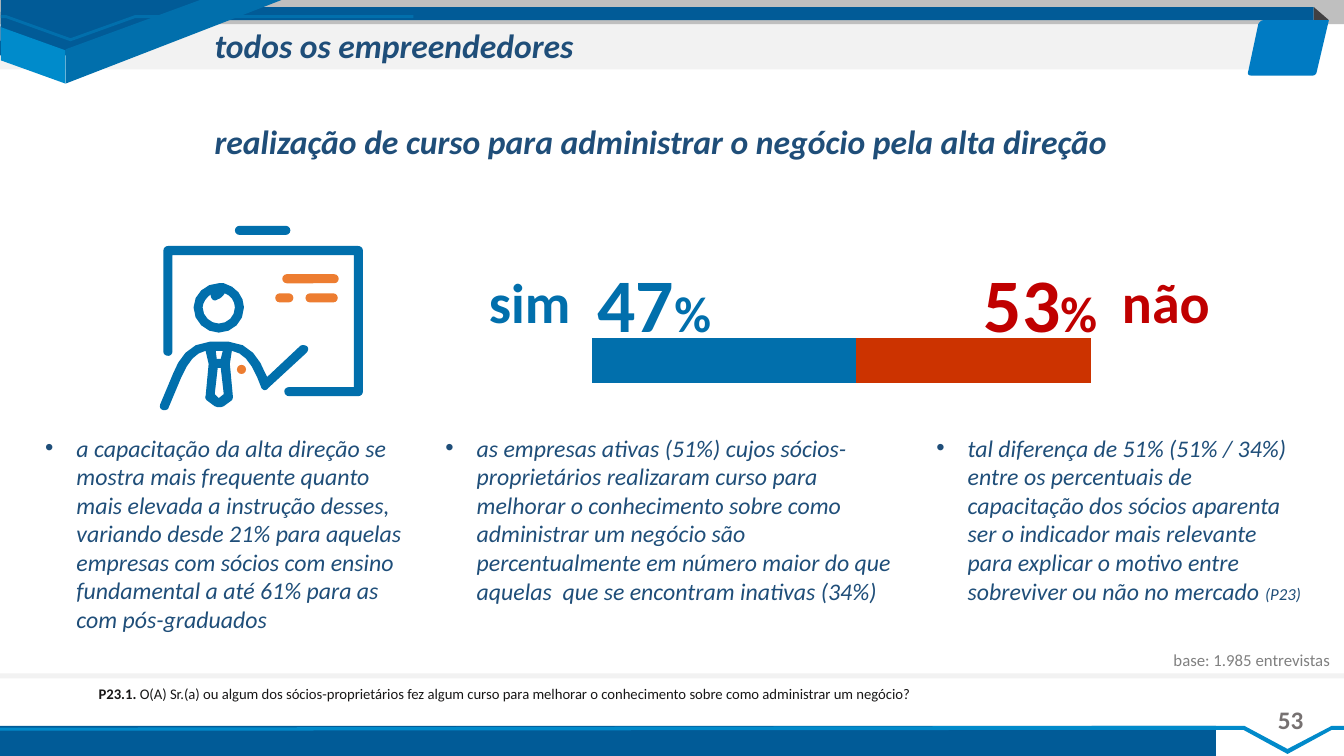
from lxml import etree
from pptx import Presentation
from pptx.chart.data import CategoryChartData
from pptx.dml.color import RGBColor
from pptx.enum.chart import XL_CHART_TYPE
from pptx.enum.shapes import MSO_SHAPE
from pptx.enum.text import MSO_AUTO_SIZE, PP_ALIGN
from pptx.oxml.ns import qn
from pptx.util import Inches, Pt

RECT = MSO_SHAPE.RECTANGLE
PILL = MSO_SHAPE.ROUNDED_RECTANGLE
OVAL = MSO_SHAPE.OVAL
STACKED = XL_CHART_TYPE.BAR_STACKED_100
CENTER = PP_ALIGN.CENTER
GROW = MSO_AUTO_SIZE.SHAPE_TO_FIT_TEXT
FONT = "Calibri"
COLORS = {
    "navy": "1F4E79", "navy_edge": "43739E", "deep": "015B97", "blue": "016FAC",
    "bright": "008BCB", "ribbon": "018ACA", "badge": "007BC3", "fold": "414042",
    "pale": "F2F2F2", "silver": "BFBFBF", "gray": "808080", "number": "767171",
    "ink": "181717", "orange": "ED7D31", "red": "C00000", "brick": "CC3300",
    "black": "000000",
}

HEADER_PIECES = [
    ("blue", [[(2.87, -.03), (2.04, -.02), (.65, .49), (.65, .83)]]),
    ("bright", [[(.65, .5), (.01, .27), (.01, .6), (.65, .83)]]),
]
FOOTER_RIBBON = [[(-.17, 7.22), (12.34, 7.2), (12.77, 7.43), (13.21, 7.2), (13.33, 7.2),
                  (13.33, 7.24), (13.21, 7.24), (12.77, 7.48), (12.33, 7.24), (-.18, 7.25)]]
HEADER_RIBBON = [[(.01, .15), (.06, .15), (.7, .38), (1.34, .15), (4.1, .15),
                  (4.1, .18), (1.34, .18), (.7, .41), (.06, .18), (.01, .18)]]
BADGE = [[(12.53, .2), (13.18, .2), (13.06, .71), (13.06, .73, 13.04, .75, 13.02, .75),
          (12.41, .75), (12.38, .75, 12.37, .73, 12.38, .71), (12.48, .24),
          (12.49, .22, 12.51, .2, 12.53, .2)]]
PRESENTER_BODY = [
    [(3.05, 3.44), (3.03, 3.42, 3, 3.42, 2.98, 3.43), (2.65, 3.74), (2.63, 3.7),
     (2.58, 3.57, 2.48, 3.4, 2.27, 3.39), (2.08, 3.39), (1.87, 3.4, 1.77, 3.57, 1.72, 3.7),
     (1.59, 4.01), (1.58, 4.04, 1.59, 4.06, 1.62, 4.07), (1.65, 4.07, 1.67, 4.06, 1.67, 4.05),
     (1.8, 3.74), (1.87, 3.58, 1.94, 3.5, 2.04, 3.48), (2.07, 3.61), (2.04, 3.93),
     (2.03, 3.94, 2.04, 3.96, 2.05, 3.97), (2.13, 4.03), (2.16, 4.04), (2.19, 4.04),
     (2.22, 4.03), (2.3, 3.97), (2.31, 3.96, 2.31, 3.94, 2.31, 3.93), (2.28, 3.61),
     (2.3, 3.48), (2.41, 3.5, 2.48, 3.58, 2.55, 3.74), (2.59, 3.84),
     (2.59, 3.85, 2.6, 3.86, 2.62, 3.87), (2.63, 3.87, 2.65, 3.87, 2.66, 3.85),
     (3.04, 3.5), (3.06, 3.48, 3.06, 3.45, 3.05, 3.44)],
    [(2.21, 3.48), (2.19, 3.56), (2.15, 3.56), (2.14, 3.48)],
    [(2.17, 3.95), (2.13, 3.91), (2.16, 3.65), (2.19, 3.65), (2.22, 3.91)],
]
BOARD = [[(3.55, 3.93), (2.87, 3.93), (2.84, 3.93, 2.82, 3.91, 2.82, 3.88),
          (2.82, 3.86, 2.84, 3.84, 2.87, 3.84), (3.51, 3.84), (3.51, 2.53), (1.71, 2.53),
          (1.71, 3.49), (1.71, 3.51, 1.69, 3.53, 1.67, 3.53),
          (1.64, 3.53, 1.62, 3.51, 1.62, 3.49), (1.62, 2.49),
          (1.62, 2.46, 1.64, 2.44, 1.67, 2.44), (3.55, 2.44),
          (3.58, 2.44, 3.6, 2.46, 3.6, 2.49), (3.6, 3.88), (3.6, 3.91, 3.58, 3.93, 3.55, 3.93)]]
PRESENTER_HEAD = [
    [(2.22, 2.81), (2.21, 2.81, 2.19, 2.81, 2.17, 2.81), (2.04, 2.81, 1.92, 2.92, 1.92, 3.05),
     (1.92, 3.19, 2.04, 3.3, 2.17, 3.3), (2.31, 3.3, 2.42, 3.19, 2.42, 3.05),
     (2.42, 2.94, 2.34, 2.84, 2.22, 2.81)],
    [(2.17, 3.21), (2.09, 3.21, 2.01, 3.14, 2.01, 3.05), (2.01, 3, 2.05, 2.95, 2.09, 2.92),
     (2.09, 2.93, 2.09, 2.95, 2.1, 2.96), (2.11, 2.98, 2.13, 2.99, 2.16, 2.97),
     (2.19, 2.96, 2.21, 2.94, 2.23, 2.91), (2.29, 2.93, 2.33, 2.99, 2.33, 3.05),
     (2.33, 3.14, 2.26, 3.21, 2.17, 3.21)],
]
BOARD_STROKES = [(3.03, 2.91, .32, "orange"), (2.73, 2.91, .18, "orange"),
                 (2.8, 2.72, .56, "orange"), (2.33, 2.24, .55, "blue")]
FINDINGS = [
    (.35, 3.78, 2.1, ["a capacitação da alta direção se mostra mais frequente quanto mais elevada a "
     "instrução desses, variando desde 21% para aquelas empresas com sócios com ensino "
     "fundamental a até 61% para as com pós-graduados"]),
    (4.32, 4.67, 1.82, ["as empresas ativas (51%) cujos sócios-proprietários realizaram curso para "
     "melhorar o conhecimento sobre como administrar um negócio são percentualmente em "
     "número maior do que aquelas  que se encontram inativas (34%)"]),
    (9.19, 3.87, 1.82, ["tal diferença de 51% (51% / 34%) entre os percentuais de capacitação dos "
     "sócios aparenta ser o indicador mais relevante para explicar o motivo entre "
     "sobreviver ou não no mercado ", "(P23)"]),
]
ANSWERS = [(4.75, 1.02, 5.83, "sim", "47", "blue"), (11.03, 1.1, 9.66, "não", "53", "red")]


def rgb(name):
    """Return the named palette colour."""
    return RGBColor.from_string(COLORS[name])


def paint(figure, color):
    """Give a shape a flat fill with no line or shadow."""
    figure.shadow.inherit = False
    figure.fill.solid()
    figure.fill.fore_color.rgb = rgb(color)
    figure.line.fill.background()
    return figure


def add_preset(slide, kind, box, color):
    """Add a flat preset shape."""
    return paint(slide.shapes.add_shape(kind, *map(Inches, box)), color)


def trace(contour):
    """Turn corners and cubic curves into a list of points."""
    points = [contour[0]]
    for step in contour[1:]:
        if len(step) == 2:
            points.append(step)
            continue
        knots = [points[-1], step[:2], step[2:4], step[4:]]
        for t in (.25, .5, .75, 1):
            weights = ((1 - t) ** 3, 3 * t * (1 - t) ** 2, 3 * t * t * (1 - t), t ** 3)
            points.append(tuple(sum(w * k[axis] for w, k in zip(weights, knots))
                                for axis in (0, 1)))
    return [(Inches(x), Inches(y)) for x, y in points]


def add_outline(slide, contours, color):
    """Add a flat freeform made of closed contours."""
    first, *others = map(trace, contours)
    builder = slide.shapes.build_freeform(*first[0])
    builder.add_line_segments(first[1:])
    for points in others:
        builder.move_to(*points[0])
        builder.add_line_segments(points[1:])
    paint(builder.convert_to_shape(), color)


def add_text(slide, box, runs, color, bold=False, italic=False, wrap=True, grow=False,
             align=None, spacing=None, before=None):
    """Add one paragraph of (text, size) runs and return it."""
    frame = slide.shapes.add_textbox(*map(Inches, box)).text_frame
    frame.word_wrap = wrap
    if grow:
        frame.auto_size = GROW
    paragraph = frame.paragraphs[0]
    paragraph.alignment = align
    paragraph.line_spacing = spacing
    paragraph.space_before = before
    for text, size in runs:
        run = paragraph.add_run()
        run.text = text
        run.font.name = FONT
        run.font.size = Pt(size)
        run.font.bold = bold
        run.font.italic = italic
        run.font.color.rgb = rgb(color)
    return paragraph


def add_bullet(paragraph):
    """Give a paragraph a round bullet and hanging indent."""
    properties = paragraph._p.get_or_add_pPr()
    properties.set("marL", str(Inches(.31)))
    properties.set("indent", str(-Inches(.31)))
    etree.SubElement(properties, qn("a:buFont")).set("typeface", "Arial")
    etree.SubElement(properties, qn("a:buChar")).set("char", "•")


def add_banner(slide):
    """Draw the header and footer decoration."""
    add_preset(slide, RECT, (0, .15, 12.9, .54), "pale")
    add_preset(slide, RECT, (0, -.03, 13.34, .27), "silver")
    add_preset(slide, RECT, (1.13, .07, 11.9, .13), "deep")
    add_outline(slide, [[(.01, -.02), (2.59, -.02), (1.29, .55), (0, .55)]], "deep")
    footer_edge = add_preset(slide, RECT, (-.22, 7.36, 12.14, .14), "navy")
    footer_edge.line.color.rgb = rgb("navy_edge")
    footer_edge.line.width = Pt(1)
    add_preset(slide, RECT, (-.04, 6.68, 13.37, .05), "pale")
    for color, contours in HEADER_PIECES:
        add_outline(slide, contours, color)
    add_preset(slide, RECT, (-.04, 7.2, 12.1, .35), "deep")
    add_outline(slide, FOOTER_RIBBON, "ribbon")
    add_outline(slide, HEADER_RIBBON, "blue")
    add_text(slide, (12.49, 6.94, .62, .4), [("53", 18)], "number", bold=True,
             wrap=False, grow=True, align=CENTER)
    add_outline(slide, [[(13.03, .2), (13.03, .07), (13.18, .2)]], "fold")
    add_outline(slide, BADGE, "badge")


def add_presenter(slide):
    """Draw the presenter in front of a board."""
    add_outline(slide, PRESENTER_BODY, "blue")
    add_outline(slide, BOARD, "blue")
    add_preset(slide, OVAL, (2.35, 3.62, .09, .09), "orange")
    add_outline(slide, PRESENTER_HEAD, "blue")
    for left, top, width, color in BOARD_STROKES:
        add_preset(slide, PILL, (left, top, width, .09), color).adjustments[0] = .5


def add_share_chart(slide):
    """Add the stacked bar that splits the two answers."""
    shares = CategoryChartData()
    shares.categories = ["1"]
    shares.add_series("Series 1", [53])
    shares.add_series("Series 2", [47])
    box = map(Inches, (5.77, 3.11, 5.15, .93))
    chart = slide.shapes.add_chart(STACKED, *box, shares).chart
    chart.has_legend = False
    chart.has_title = False
    chart.font.name = FONT
    chart.font.size = Pt(10)
    chart.font.color.rgb = rgb("black")
    chart.value_axis.has_major_gridlines = False
    chart.value_axis.visible = False
    chart.category_axis.visible = False
    plot = chart.plots[0]
    plot.gap_width = 100
    plot.overlap = 100
    plot.vary_by_categories = False
    for series, color in zip(plot.series, ("blue", "brick")):
        series.format.fill.solid()
        series.format.fill.fore_color.rgb = rgb(color)


def main():
    """Build and save the slide."""
    deck = Presentation()
    deck.slide_width, deck.slide_height = Inches(13.33), Inches(7.5)
    slide = deck.slides.add_slide(deck.slide_layouts[6])
    add_banner(slide)
    question = add_text(
        slide, (.88, 6.74, 10.55, .73),
        [("P23.1. ", 10.5), ("O(A) Sr.(a) ou algum dos sócios-proprietários fez algum curso para "
          "melhorar o conhecimento sobre como administrar um negócio?", 10.5)],
        "ink", before=Pt(10))
    question.runs[0].font.bold = True
    add_text(slide, (1.69, 1.2, 9.73, .53),
             [("realização de curso para administrar o negócio pela alta direção", 24)],
             "navy", bold=True, italic=True, align=CENTER, spacing=.9)
    add_presenter(slide)
    add_share_chart(slide)
    for label_left, label_width, share_left, label, share, color in ANSWERS:
        add_text(slide, (label_left, 2.61, label_width, .77), [(label, 40)], color,
                 bold=True, wrap=False, grow=True)
        add_text(slide, (share_left, 2.5, 1.34, 1.01), [(share, 54), ("%", 36)], color,
                 bold=True, wrap=False, grow=True)
    add_text(slide, (2.03, .24, 10.41, .51), [("todos os empreendedores", 24)],
             "navy", bold=True, italic=True, spacing=.9)
    for left, width, height, texts in FINDINGS:
        add_bullet(add_text(slide, (left, 4.25, width, height), zip(texts, (17, 12)),
                            "navy", italic=True, grow=True))
    add_text(slide, (11.54, 6.42, 1.79, .32), [("base: 1.985 entrevistas", 12)],
             "gray", spacing=.9, before=Pt(10))
    deck.save("out.pptx")


if __name__ == "__main__":
    main()
